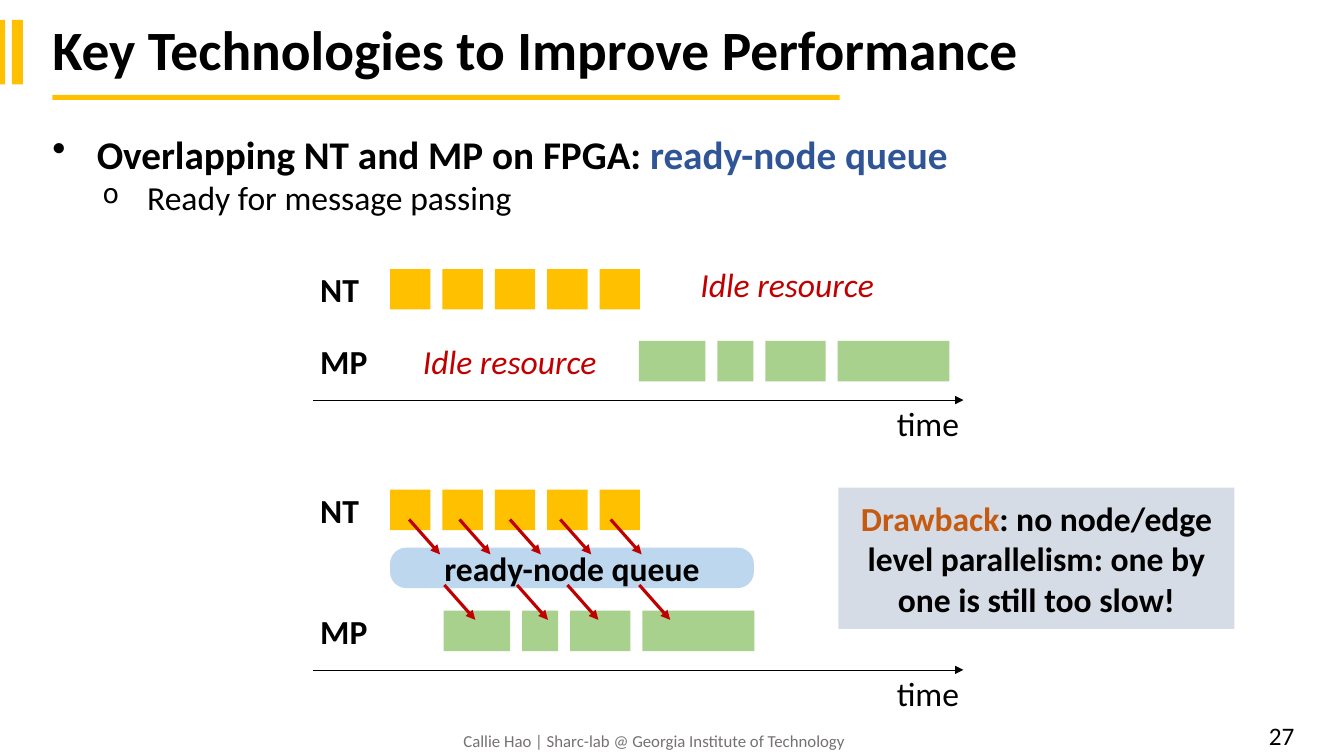
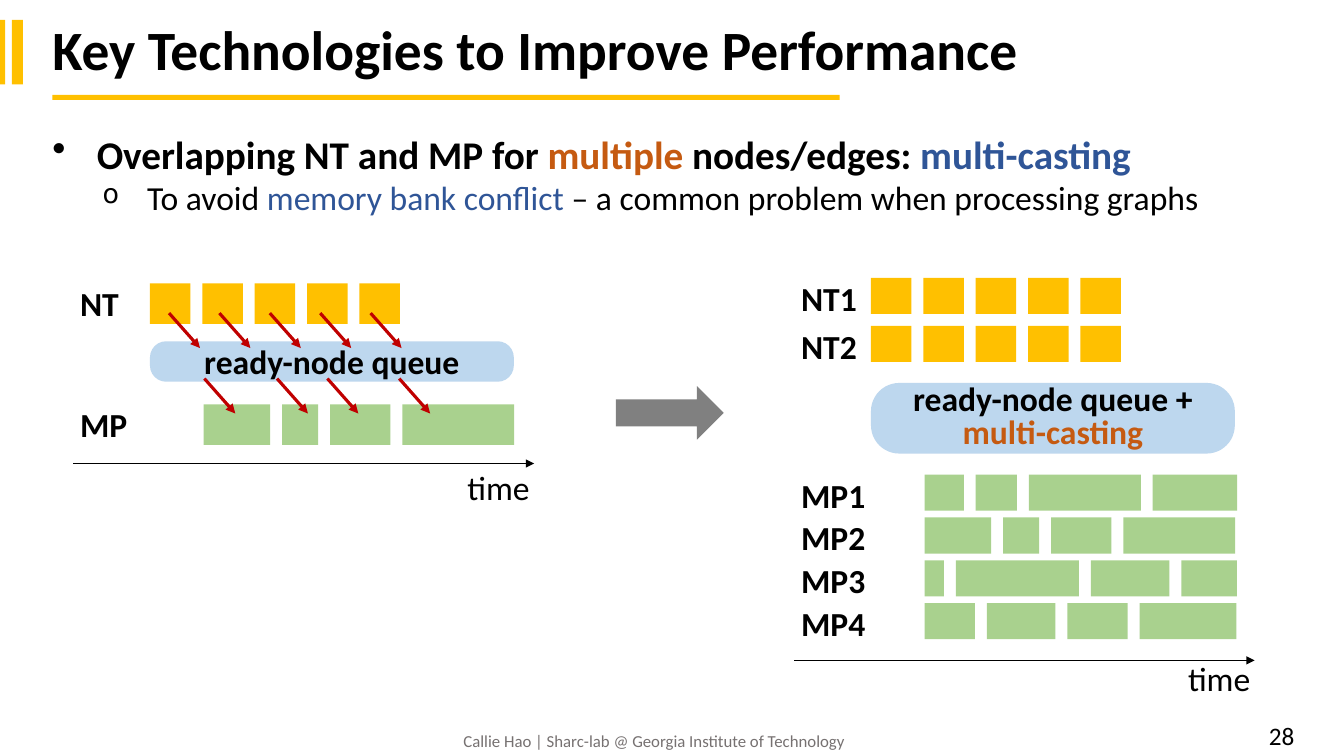
from dataclasses import dataclass
from typing import Optional, Sequence

from lxml.etree import SubElement
from pptx import Presentation
from pptx.dml.color import RGBColor
from pptx.enum.shapes import MSO_CONNECTOR, MSO_SHAPE
from pptx.enum.text import MSO_ANCHOR, PP_ALIGN
from pptx.oxml.ns import qn
from pptx.util import Cm, Pt

FONT = "Calibri"
COLORS = {
    "black": "000000", "gold": "FFC000", "green": "A9D18E", "sky": "BDD7EE",
    "blue": "2F5597", "orange": "C55A11", "red": "C00000", "gray": "808080",
    "panel": "D6DCE5", "footer": "767171",
}
TITLE = "Key Technologies to Improve Performance"
FOOTER = "Callie Hao | Sharc-lab @ Georgia Institute of Technology"

# Timeline measures, in cm
BLOCK, GAP = 1.02, 0.3
NT_WIDTHS = (BLOCK,) * 5
MP_WIDTHS = (1.68, 0.91, 1.52, 2.82)
MP_SHIFT = 1.35
QUEUE_WIDTH = 9.17


@dataclass(frozen=True)
class Box:
    x: float
    y: float
    w: float
    h: float


@dataclass(frozen=True)
class Run:
    text: str
    color: str = "black"


@dataclass(frozen=True)
class Bullet:
    char: str
    indent: float
    percent: int = 100


@dataclass(frozen=True)
class Row:
    label: str
    y: float
    widths: Sequence[float]
    color: str
    shift: float = 0


def rgb(name: str) -> RGBColor:
    return RGBColor.from_string(COLORS[name])


# Text
def write(tf, *runs: Run, size: float = 24, bold: bool = False,
          italic: bool = False, align=PP_ALIGN.LEFT, spacing: float = 1,
          anchor=MSO_ANCHOR.TOP, wrap: bool = True,
          bullet: Optional[Bullet] = None) -> None:
    """Fill the first paragraph of a frame, or append one if it has text."""
    tf.word_wrap = wrap
    tf.vertical_anchor = anchor
    p = tf.add_paragraph() if tf.text else tf.paragraphs[0]
    p.alignment = align
    p.line_spacing = spacing
    if bullet:
        pPr = p._p.get_or_add_pPr()
        pPr.set("marL", str(Cm(bullet.indent)))
        pPr.set("indent", str(-Cm(1.12)))
        SubElement(pPr, qn("a:buSzPct")).set("val", str(bullet.percent * 1000))
        SubElement(pPr, qn("a:buChar")).set("char", bullet.char)
    for run in runs:
        r = p.add_run()
        r.text = run.text
        r.font.name = FONT
        r.font.size = Pt(size)
        r.font.bold = bold
        r.font.italic = italic
        r.font.color.rgb = rgb(run.color)


def add_frame(s, box: Box):
    return s.shapes.add_textbox(Cm(box.x), Cm(box.y), Cm(box.w), Cm(box.h)).text_frame


# Shapes and lines
def add_shape(s, box: Box, color: str, kind=MSO_SHAPE.RECTANGLE):
    sp = s.shapes.add_shape(kind, Cm(box.x), Cm(box.y), Cm(box.w), Cm(box.h))
    sp.shadow.inherit = False
    sp.fill.solid()
    sp.fill.fore_color.rgb = rgb(color)
    sp.line.fill.background()
    return sp


def add_arrow(s, x1: float, y1: float, x2: float, y2: float,
              color: str = "red", width: float = 2.25) -> None:
    line = s.shapes.add_connector(
        MSO_CONNECTOR.STRAIGHT, Cm(x1), Cm(y1), Cm(x2), Cm(y2))
    line.line.color.rgb = rgb(color)
    line.line.width = Pt(width)
    SubElement(line.line._get_or_add_ln(), qn("a:tailEnd")).set("type", "triangle")
    SubElement(line._element.spPr, qn("a:effectLst"))


# Timeline parts
def add_row(s, x: float, row: Row, height: float = BLOCK) -> None:
    write(add_frame(s, Box(x - 2.01, row.y - 0.13, 2.2, 1.27)),
          Run(row.label), bold=True, wrap=False)
    left = x + row.shift
    for w in row.widths:
        add_shape(s, Box(left, row.y, w, height), row.color)
        left += w + GAP


def add_axis(s, x: float, end: float, y: float, drop: float = -0.04) -> None:
    add_arrow(s, x - 1.93, y, end, y, "black", 0.5)
    write(add_frame(s, Box(end - 1.93, y + drop, 2.54, 1.27)), Run("time"))


def add_queue(s, x: float, y: float, h: float, *runs: Run, spacing: float = 1) -> None:
    sp = add_shape(s, Box(x, y, QUEUE_WIDTH, h), "sky", MSO_SHAPE.ROUNDED_RECTANGLE)
    sp.adjustments[0] = 0.4
    write(sp.text_frame, *runs, bold=True, align=PP_ALIGN.CENTER,
          anchor=MSO_ANCHOR.MIDDLE, spacing=spacing)


def add_queue_timeline(s, x: float, y: float, end: float) -> None:
    add_row(s, x, Row("NT", y, NT_WIDTHS, "gold"))
    add_row(s, x, Row("MP", y + 3.05, MP_WIDTHS, "green", MP_SHIFT))
    add_axis(s, x, end, y + 4.54)
    add_queue(s, x, y + 1.46, BLOCK, Run("ready-node queue"))
    into_queue = [(0.48 + 1.27 * i, 0.75) for i in range(len(NT_WIDTHS))]
    out_of_queue = [(dx, 2.4) for dx in (1.37, 3.2, 4.47, 6.28)]
    for dx, dy in into_queue + out_of_queue:
        add_arrow(s, x + dx, y + dy, x + dx + 0.78, y + dy + 0.88)


# Shared slide frame
def add_slide(prs, number: int, heading: Sequence[Run], detail: Sequence[Run]):
    s = prs.slides.add_slide(prs.slide_layouts[6])
    for bar in (Box(0, 0.5, 0.13, 1.63), Box(0.3, 0.5, 0.28, 1.63),
                Box(1.32, 2.39, 19.84, 0.13)):
        add_shape(s, bar, "gold")
    write(add_frame(s, Box(1.07, 0.46, 31.45, 1.73)), Run(TITLE),
          size=39.6, bold=True, spacing=0.9, anchor=MSO_ANCHOR.MIDDLE)
    body = add_frame(s, Box(1.07, 3.15, 31.62, 2.97))
    write(body, *heading, size=28, bold=True, bullet=Bullet("•", 1.12))
    write(body, *detail, bullet=Bullet("o", 2.39, 80))
    write(add_frame(s, Box(11.43, 18.49, 10.36, 0.38)), Run(FOOTER, "footer"),
          size=12, anchor=MSO_ANCHOR.MIDDLE)
    write(add_frame(s, Box(30.89, 18.03, 1.98, 0.84)), Run(str(number)),
          size=18, align=PP_ALIGN.RIGHT)
    return s


def build_ready_node_queue(prs) -> None:
    s = add_slide(
        prs, 27,
        [Run("Overlapping NT and MP on FPGA: "), Run("ready-node queue", "blue")],
        [Run("Ready for message passing")])
    x, end = 9.83, 24.28

    # Sequential timeline
    add_row(s, x, Row("NT", 6.78, NT_WIDTHS, "gold"))
    add_row(s, x, Row("MP", 8.59, MP_WIDTHS, "green", 6.27))
    add_axis(s, x, end, 10.08)
    for left, top in ((17.4, 6.53), (10.41, 8.46)):
        write(add_frame(s, Box(left, top, 5, 1.55)),
              Run("Idle resource", "red"), italic=True)

    # Overlapped timeline and its drawback
    add_queue_timeline(s, x, 12.34, end)
    sp = add_shape(s, Box(21.13, 12.29, 9.98, 3.56), "panel")
    write(sp.text_frame, Run("Drawback", "orange"),
          Run(": no node/edge level parallelism: one by one is still too slow!"),
          bold=True, align=PP_ALIGN.CENTER, anchor=MSO_ANCHOR.MIDDLE)


def build_multi_casting(prs) -> None:
    s = add_slide(
        prs, 28,
        [Run("Overlapping NT and MP for "), Run("multiple", "orange"),
         Run(" nodes/edges: "), Run("multi-casting", "blue")],
        [Run("To avoid "), Run("memory bank conflict ", "blue"),
         Run("– a common problem when processing graphs")])

    # Single queue, leading to the parallel version
    add_queue_timeline(s, 3.78, 7.14, 13.46)
    add_shape(s, Box(15.52, 9.73, 2.72, 1.35), "gray", MSO_SHAPE.RIGHT_ARROW)

    # Parallel timeline
    x = 21.95
    mp_rows = (
        (0.99, 1.04, 2.82, 2.13),
        MP_WIDTHS,
        (0.49, 3.1, 1.98, 1.4),
        (1.27, 1.73, 1.52, 2.44),
    )
    rows = [Row(f"NT{i + 1}", 7 + 1.21 * i, NT_WIDTHS, "gold") for i in range(2)]
    rows += [Row(f"MP{i + 1}", 11.96 + 1.08 * i, widths, "green", MP_SHIFT)
             for i, widths in enumerate(mp_rows)]
    for row in rows:
        add_row(s, x, row, 0.91)
    add_queue(s, x, 9.65, 1.78, Run("ready-node queue + "),
              Run("multi-casting", "orange"), spacing=0.8)
    add_axis(s, x, 31.62, 16.64, -0.18)


def main() -> None:
    prs = Presentation()
    prs.slide_width, prs.slide_height = Cm(33.87), Cm(19.05)
    build_ready_node_queue(prs)
    build_multi_casting(prs)
    prs.save("out.pptx")


if __name__ == "__main__":
    main()
